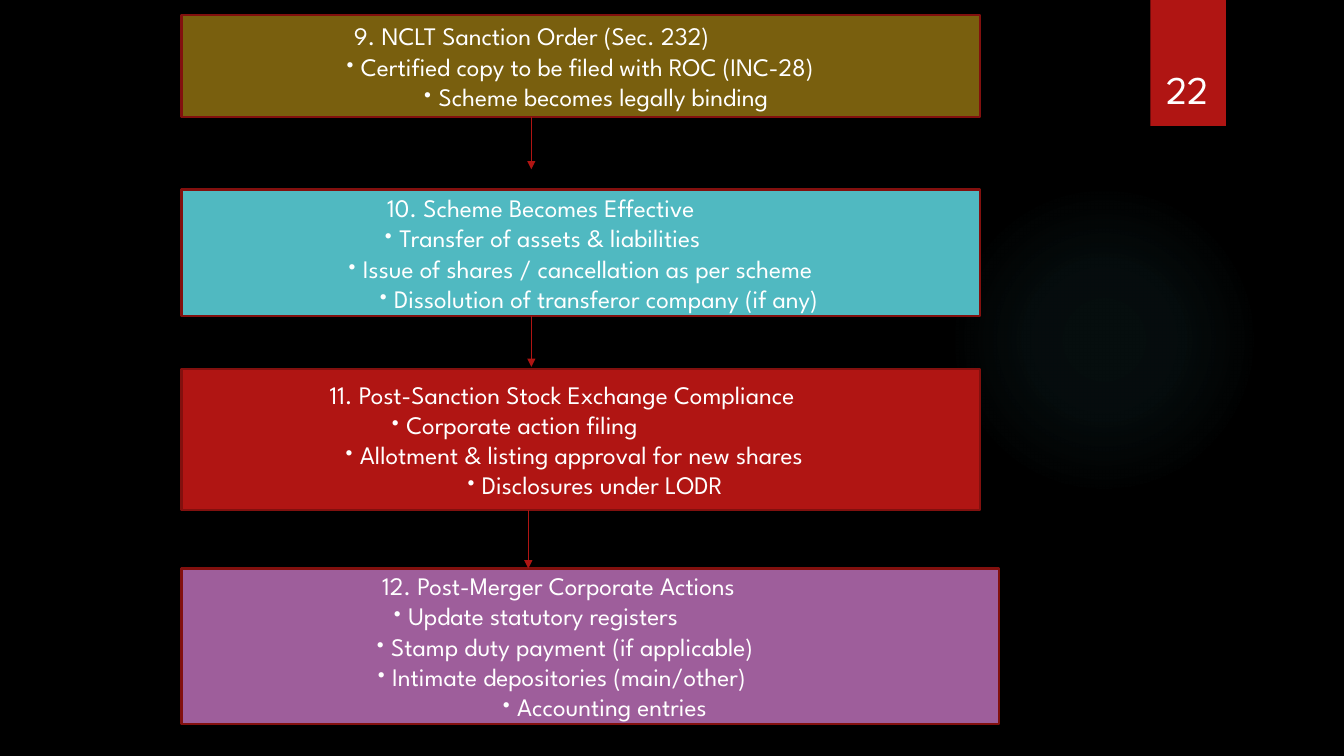
from lxml import etree
from pptx import Presentation
from pptx.dml.color import RGBColor
from pptx.enum import shapes, text
from pptx.oxml import parse_xml
from pptx.oxml.ns import nsdecls, qn
from pptx.util import Inches, Pt

FONT = "League Spartan"
BLACK = RGBColor(0x00, 0x00, 0x00)
WHITE = RGBColor(0xFF, 0xFF, 0xFF)
RED = RGBColor(0xB0, 0x15, 0x13)
DARK_RED = RGBColor(0x82, 0x10, 0x0E)
OLIVE = RGBColor(0x79, 0x5F, 0x0E)
TEAL = RGBColor(0x50, 0xB9, 0xC1)
PURPLE = RGBColor(0x9E, 0x5E, 0x9B)

STEP_LEFT = 1.8
BULLET_GAP = 0.17

# Each step: top, width, height, fill, then lines as (left edge of the text, words);
# the first line is the heading and the others are bullets.
STEPS = [
    (0.15, 7.92, 1.01, OLIVE, [
        (3.51, "9. NCLT Sanction Order (Sec. 232)"),
        (3.58, "Certified copy to be filed with ROC (INC-28)"),
        (4.35, "Scheme becomes legally binding")]),
    (1.88, 7.92, 1.26, TEAL, [
        (3.84, "10. Scheme Becomes Effective"),
        (3.96, "Transfer of assets & liabilities"),
        (3.6, "Issue of shares / cancellation as per scheme"),
        (3.91, "Dissolution of transferor company (if any)")]),
    (3.66, 7.92, 1.4, RED, [
        (3.27, "11. Post-Sanction Stock Exchange Compliance"),
        (4.03, "Corporate action filing"),
        (3.57, "Allotment & listing approval for new shares"),
        (4.78, "Disclosures under LODR")]),
    (5.64, 8.11, 1.54, PURPLE, [
        (3.79, "12. Post-Merger Corporate Actions"),
        (4.05, "Update statutory registers"),
        (3.88, "Stamp duty payment (if applicable)"),
        (3.89, "Intimate depositories (main/other)"),
        (5.13, "Accounting entries")]),
]
# Each arrow: x, start y, end y
ARROWS = [(5.27, 1.16, 1.68), (5.27, 3.14, 3.64), (5.24, 5.06, 5.64)]


def add_block(page, kind, left, top, width, height, fill=None, line=None):
    block = page.shapes.add_shape(
        kind, Inches(left), Inches(top), Inches(width), Inches(height))
    block.shadow.inherit = False
    if fill is not None:
        block.fill.solid()
        block.fill.fore_color.rgb = fill
    if line is None:
        block.line.fill.background()
    else:
        block.line.color.rgb = line
        block.line.width = Pt(1.5)
    return block


def write(para, words, size=18, align=text.PP_ALIGN.LEFT, indent=0, bullet=False):
    props = para._p.get_or_add_pPr()
    props.set("marL", str(Inches(indent)))
    if bullet:
        props.set("indent", str(-Inches(BULLET_GAP)))
        etree.SubElement(props, qn("a:buFont"), typeface=FONT)
        etree.SubElement(props, qn("a:buChar"), char="•")
    para.alignment = align
    span = para.add_run()
    span.text = words
    span.font.name = FONT
    span.font.size = Pt(size)
    span.font.color.rgb = WHITE


def add_glow(page):
    """Add a faint round light that fades out from its centre."""
    glow = add_block(page, shapes.MSO_SHAPE.OVAL, 9.41, 1.83, 3.08, 3.08)
    stops = "".join(
        f'<a:gs pos="{place * 1000}"><a:srgbClr val="{TEAL}">'
        f'<a:alpha val="{alpha * 1000}"/></a:srgbClr></a:gs>'
        for place, alpha in [(0, 7), (36, 6), (69, 0)])
    gradient = parse_xml(
        f'<a:gradFill {nsdecls("a")}><a:gsLst>{stops}</a:gsLst><a:path path="circle">'
        '<a:fillToRect l="50000" t="50000" r="50000" b="50000"/></a:path></a:gradFill>')
    glow._element.spPr.find(qn("a:prstGeom")).addnext(gradient)


def add_page_number(page, number):
    add_block(page, shapes.MSO_SHAPE.RECTANGLE, 11.41, 0, 0.75, 1.25, fill=RED)
    box = page.shapes.add_textbox(
        Inches(11.32), Inches(0.32), Inches(0.92), Inches(0.84))
    frame = box.text_frame
    frame.word_wrap = True
    frame.vertical_anchor = text.MSO_ANCHOR.BOTTOM
    write(frame.paragraphs[0], number, size=28, align=text.PP_ALIGN.CENTER)


def add_step(page, top, width, height, fill, lines):
    step = add_block(page, shapes.MSO_SHAPE.RECTANGLE,
                     STEP_LEFT, top, width, height, fill, DARK_RED)
    frame = step.text_frame
    frame.word_wrap = True
    frame.margin_left = 0
    frame.vertical_anchor = text.MSO_ANCHOR.MIDDLE
    for index, (left, words) in enumerate(lines):
        para = frame.add_paragraph() if index else frame.paragraphs[0]
        write(para, words, indent=left - STEP_LEFT, bullet=index > 0)


def add_arrow(page, x, start, end):
    arrow = page.shapes.add_connector(
        shapes.MSO_CONNECTOR.STRAIGHT, Inches(x), Inches(start), Inches(x), Inches(end))
    arrow.line.color.rgb = RED
    arrow.line.width = Pt(0.75)
    etree.SubElement(arrow.line._get_or_add_ln(), qn("a:tailEnd"), type="triangle")
    etree.SubElement(arrow._element.spPr, qn("a:effectLst"))


def main():
    deck = Presentation()
    deck.slide_width, deck.slide_height = Inches(13.33), Inches(7.5)
    page = deck.slides.add_slide(deck.slide_layouts[6])
    page.background.fill.solid()
    page.background.fill.fore_color.rgb = BLACK
    add_glow(page)
    add_page_number(page, "22")
    for step in STEPS:
        add_step(page, *step)
    for arrow in ARROWS:
        add_arrow(page, *arrow)
    deck.save("out.pptx")


if __name__ == "__main__":
    main()
